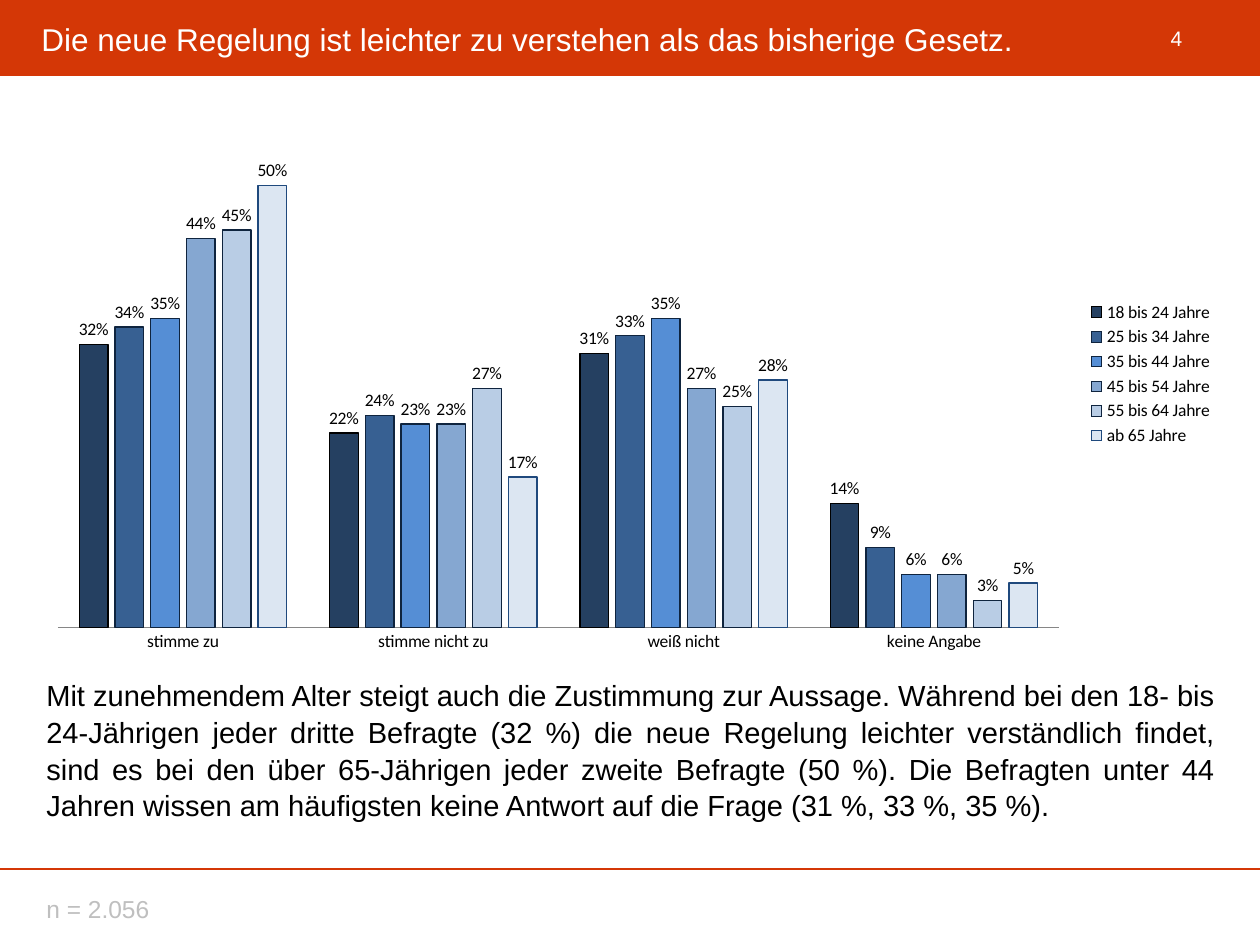
from dataclasses import dataclass

from lxml import etree
from pptx import Presentation
from pptx import util as u
from pptx.chart import data
from pptx.dml.color import RGBColor
from pptx.enum import chart as ch, shapes, text
from pptx.oxml import parse_xml
from pptx.oxml.ns import nsdecls, qn


@dataclass(frozen=True)
class Theme:
    accent: str = "D43706"
    white: str = "FFFFFF"
    ink: str = "000000"
    muted: str = "BFBFBF"
    axis: str = "868686"
    font: str = "Arial"
    chart_font: str = "Calibri"
    title: float = 18
    body: float = 16.6
    note: float = 14
    number: float = 12
    chart: float = 10


THEME = Theme()
PX_PER_INCH = 126
PERCENT = "###0%"

CATEGORIES = ["stimme zu", "stimme nicht zu", "weiß nicht", "keine Angabe"]
# name, values, fill, outline
AGE_GROUPS = [
    ("18 bis 24 Jahre", (0.32, 0.22, 0.31, 0.14), "254061", "000000"),
    ("25 bis 34 Jahre", (0.34, 0.24, 0.33, 0.09), "376092", "0F243E"),
    ("35 bis 44 Jahre", (0.35, 0.23, 0.35, 0.06), "558ED5", "0F243E"),
    ("45 bis 54 Jahre", (0.44, 0.23, 0.27, 0.06), "85A7D1", "0F243E"),
    ("55 bis 64 Jahre", (0.45, 0.27, 0.25, 0.03), "B9CDE5", "0F243E"),
    ("ab 65 Jahre", (0.5, 0.17, 0.28, 0.05), "DCE6F2", "1F497D"),
]
COMMENT = (
    "Mit zunehmendem Alter steigt auch die Zustimmung zur Aussage. Während bei den 18- "
    "bis 24-Jährigen jeder dritte Befragte (32 %) die neue Regelung leichter verständlich "
    "findet, sind es bei den über 65-Jährigen jeder zweite Befragte (50 %). Die Befragten "
    "unter 44 Jahren wissen am häufigsten keine Antwort auf die Frage (31 %, 33 %, 35 %)."
)


def px(n):
    return u.Emu(round(n * 914400 / PX_PER_INCH))


def rgb(value):
    return RGBColor.from_string(value)


def add_text(slide, box, words, size, color, align=text.PP_ALIGN.LEFT,
             anchor=text.MSO_ANCHOR.MIDDLE, spacing=None):
    tf = slide.shapes.add_textbox(*map(px, box)).text_frame
    tf.word_wrap = True
    tf.vertical_anchor = anchor
    p = tf.paragraphs[0]
    p.alignment = align
    p.line_spacing = spacing
    r = p.add_run()
    r.text = words
    r.font.name = THEME.font
    r.font.size = u.Pt(size)
    r.font.color.rgb = rgb(color)


def add_header(slide, box, title, number):
    x, y, w, h = box
    bar = slide.shapes.add_shape(shapes.MSO_SHAPE.RECTANGLE, *map(px, box))
    bar.shadow.inherit = False
    bar.fill.solid()
    bar.fill.fore_color.rgb = rgb(THEME.accent)
    bar.line.fill.background()
    add_text(slide, (x + w - 134, y + 13, 101, 50), number, THEME.number, THEME.white,
             align=text.PP_ALIGN.CENTER)
    add_text(slide, (x + 29, y + 20, w - 62, 38), title, THEME.title, THEME.white)


def set_plot_area(chart, **fractions):
    """Fix the inner plot area, given as fractions of the chart."""
    plot_area = chart._chartSpace.chart.plotArea
    for old in plot_area.findall(qn("c:layout")):
        plot_area.remove(old)
    sizes = "".join(f'<c:{k} val="{v}"/>' for k, v in fractions.items())
    plot_area.insert(0, parse_xml(
        f'<c:layout {nsdecls("c")}><c:manualLayout><c:layoutTarget val="inner"/>'
        f'<c:xMode val="edge"/><c:yMode val="edge"/>{sizes}</c:manualLayout></c:layout>'))


def add_age_chart(slide, box):
    cd = data.CategoryChartData(number_format=PERCENT)
    cd.categories = CATEGORIES
    for name, values, _, _ in AGE_GROUPS:
        cd.add_series(name, values)
    chart = slide.shapes.add_chart(
        ch.XL_CHART_TYPE.COLUMN_CLUSTERED, *map(px, box), cd).chart
    chart.has_title = False
    chart.font.name = THEME.chart_font
    chart.font.size = u.Pt(THEME.chart)
    chart.font.color.rgb = rgb(THEME.ink)
    chart.has_legend = True
    chart.legend.position = ch.XL_LEGEND_POSITION.RIGHT
    chart.legend.include_in_layout = False

    axis = chart.category_axis
    axis.major_tick_mark = ch.XL_TICK_MARK.NONE
    axis.format.line.color.rgb = rgb(THEME.axis)
    axis.format.line.width = u.Pt(0.75)
    axis = chart.value_axis
    axis.visible = False
    axis.has_major_gridlines = False
    axis.minimum_scale, axis.maximum_scale = 0, 0.6
    axis.tick_labels.number_format = PERCENT
    axis.tick_labels.number_format_is_linked = False

    plot = chart.plots[0]
    plot.gap_width, plot.overlap = 150, -25
    plot.vary_by_categories = False
    for series, (_, _, fill, outline) in zip(plot.series, AGE_GROUPS):
        series.format.fill.solid()
        series.format.fill.fore_color.rgb = rgb(fill)
        series.format.line.color.rgb = rgb(outline)
        series.format.line.width = u.Pt(0.75)
        labels = series.data_labels
        labels.show_value = True
        labels.number_format = PERCENT
        labels.number_format_is_linked = False
        labels.position = ch.XL_LABEL_POSITION.OUTSIDE_END
    set_plot_area(chart, x=0.02, y=0.02, w=0.84, h=0.92)


def add_footer(slide, box, note):
    x, y, w, _ = box
    rule = slide.shapes.add_connector(
        shapes.MSO_CONNECTOR.STRAIGHT, px(x), px(y), px(x + w), px(y))
    rule.line.color.rgb = rgb(THEME.accent)
    rule.line.width = u.Pt(0.75)
    etree.SubElement(rule._element.spPr, qn("a:effectLst"))
    add_text(slide, (x + 34, y + 20, 1022, 40), note, THEME.note, THEME.muted)


def main():
    prs = Presentation()
    prs.slide_width, prs.slide_height = px(1260), px(945)
    slide = prs.slides.add_slide(prs.slide_layouts[6])
    add_header(slide, (0, 0, 1260, 76),
               "Die neue Regelung ist leichter zu verstehen als das bisherige Gesetz.", "4")
    add_age_chart(slide, (34, 86, 1192, 576))
    add_text(slide, (34, 670, 1192, 179), COMMENT, THEME.body, THEME.ink,
             align=text.PP_ALIGN.JUSTIFY, anchor=text.MSO_ANCHOR.TOP, spacing=1.05)
    add_footer(slide, (0, 869, 1260, 76), "n = 2.056")
    prs.save("out.pptx")


if __name__ == "__main__":
    main()
